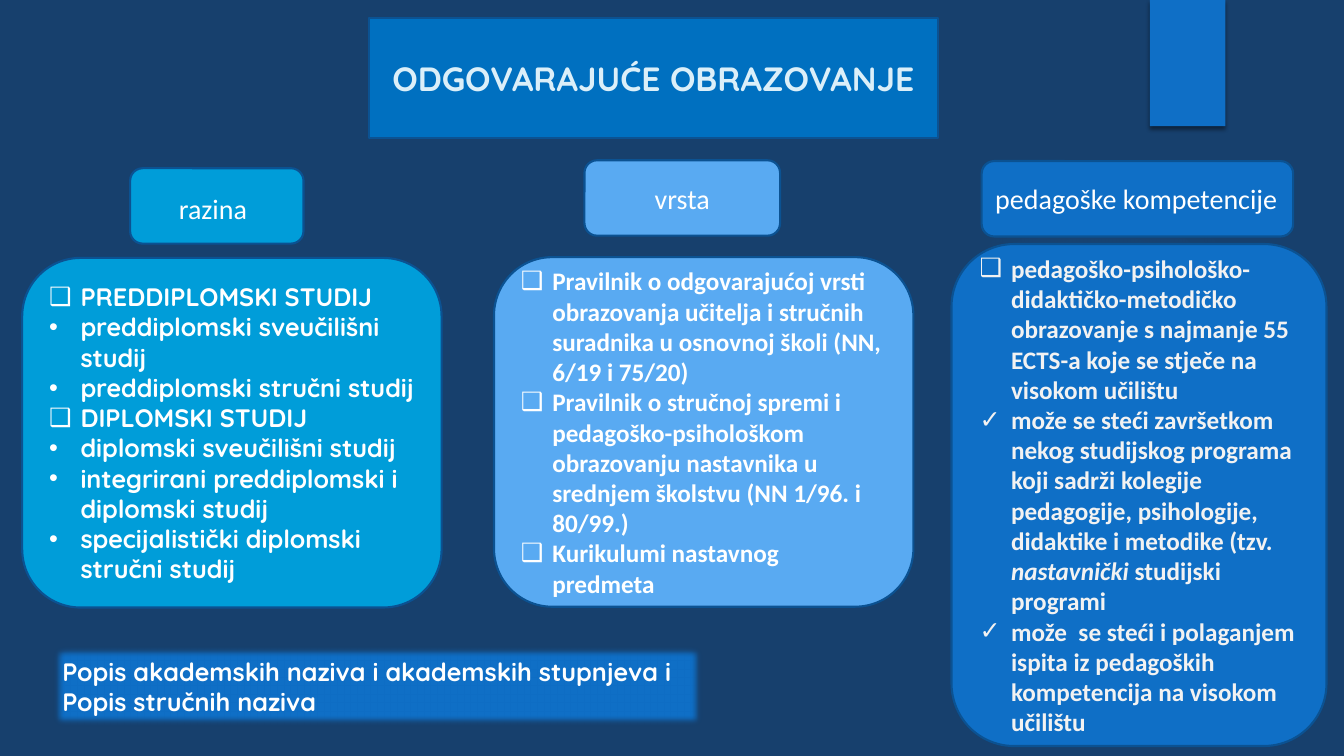
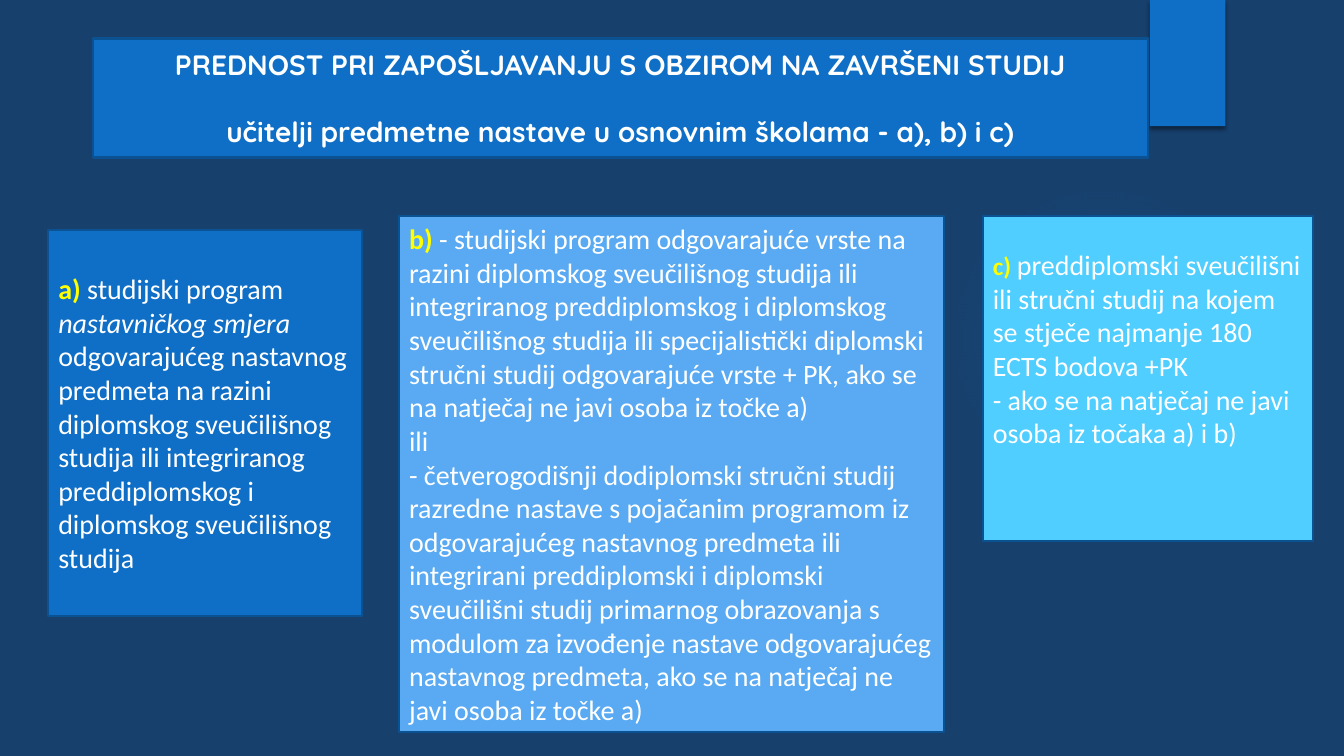
from lxml import etree
from pptx import Presentation
from pptx import util as u
from pptx.dml.color import RGBColor
from pptx.enum import shapes, text
from pptx.oxml import ns, parse_xml

NAVY, EDGE, BLUE, SKY = "17406D", "0B5292", "0F6FC6", "59AAF2"
CYAN, AQUA, TITLE = "009DD9", "4FCEFF", "0070C0"
WHITE, PALE, MIST, YELLOW = "FFFFFF", "F2F2F2", "DBEFF9", "FFFF00"
GLOW = "448AD7"
HEAD, BODY = "Quicksand", "Calibri"
RECT, ROUND = shapes.MSO_SHAPE.RECTANGLE, shapes.MSO_SHAPE.ROUNDED_RECTANGLE
LEFT, MID = text.PP_ALIGN.LEFT, text.PP_ALIGN.CENTER
INDENT = u.Cm(0.79)

MARK = {"color": YELLOW, "bold": True}
ITALIC = {"italic": True}


def rgb(code):
    return RGBColor.from_string(code)


def effect(shape, xml):
    """Append one DrawingML effect to the shape's effect list."""
    effects = shape._element.spPr.find(ns.qn("a:effectLst"))
    effects.append(parse_xml(xml.replace(" ", f" {ns.nsdecls('a')} ", 1)))


def block(slide, place, fill, kind=RECT, line=EDGE):
    """Draw a filled shape at (left, top, width, height) in cm."""
    shape = slide.shapes.add_shape(kind, *map(u.Cm, place))
    shape.shadow.inherit = False
    shape.fill.solid()
    shape.fill.fore_color.rgb = rgb(fill)
    if line:
        shape.line.color.rgb = rgb(line)
        shape.line.width = u.Pt(1.5)
    else:
        shape.line.fill.background()
    return shape


def glow(slide):
    """Draw the faint radial light behind the content."""
    shape = block(slide, (23.9, 4.65, 7.82, 7.82), GLOW,
                  shapes.MSO_SHAPE.OVAL, None)
    stops = "".join(
        f'<a:gs pos="{pos}000"><a:srgbClr val="{GLOW}">'
        f'<a:alpha val="{alpha}000"/></a:srgbClr></a:gs>'
        for pos, alpha in ((0, 7), (36, 6), (69, 0)))
    old = shape._element.spPr.find(ns.qn("a:solidFill"))
    old.getparent().replace(old, parse_xml(
        f'<a:gradFill {ns.nsdecls("a")}><a:gsLst>{stops}</a:gsLst>'
        '<a:path path="circle"><a:fillToRect l="50000" t="50000" '
        'r="50000" b="50000"/></a:path></a:gradFill>'))


def tab(slide):
    """Draw the blue tab hanging from the top edge."""
    shape = block(slide, (28.98, 0, 1.9, 3.18), BLUE, line=None)
    effect(shape, '<a:outerShdw blurRad="38100" dist="25400" dir="5400000" '
                  'rotWithShape="0"><a:srgbClr val="000000">'
                  '<a:alpha val="45000"/></a:srgbClr></a:outerShdw>')


def page(deck):
    slide = deck.slides.add_slide(deck.slide_layouts[6])
    glow(slide)
    tab(slide)
    return slide


def bullet(para, sign):
    props = para._p.get_or_add_pPr()
    props.set("marL", str(INDENT))
    props.set("indent", str(-INDENT))
    etree.SubElement(props, ns.qn("a:buFont")).set("typeface", "Arial")
    etree.SubElement(props, ns.qn("a:buChar")).set("char", sign)


def write(shape, paras, size=20, font=BODY, color=WHITE, bold=False,
          align=LEFT, signs="", gap=0):
    """Fill a shape; a paragraph is a string or a list of (text, style)."""
    frame = shape.text_frame
    frame.word_wrap = True
    frame.vertical_anchor = text.MSO_ANCHOR.MIDDLE
    for i, parts in enumerate(paras):
        para = frame.add_paragraph() if i else frame.paragraphs[0]
        para.alignment = align
        if i and gap:
            para.space_before = u.Pt(gap)
        if signs:
            bullet(para, signs[i])
        if isinstance(parts, str):
            parts = [(parts, {})]
        for words, style in parts:
            run = para.add_run()
            run.text = words
            run.font.name = font
            run.font.size = u.Pt(style.get("size", size))
            run.font.bold = style.get("bold", bold)
            run.font.italic = style.get("italic", False)
            run.font.color.rgb = rgb(style.get("color", color))


def level(deck):
    """Slide on level, kind and teaching skills."""
    slide = page(deck)
    write(block(slide, (9.3, 0.46, 14.33, 3.02), TITLE),
          ["ODGOVARAJUĆE OBRAZOVANJE"], 24, HEAD, MIST, True, MID)

    labels = [
        ((3.28, 4.24, 4.37, 1.9), CYAN, MID,
         [("razina", {}), (" ", {"size": 24})]),
        ((14.73, 4.04, 4.93, 1.9), SKY, MID, "vrsta"),
        ((24.74, 4.06, 7.85, 1.9), BLUE, LEFT, "pedagoške kompetencije"),
    ]
    for place, fill, align, label in labels:
        write(block(slide, place, fill, ROUND), [label], align=align)

    panels = [
        ((0.56, 6.5, 10.57, 8.81), CYAN, HEAD, WHITE, "❑••❑•••", [
            "PREDDIPLOMSKI STUDIJ",
            "preddiplomski sveučilišni studij",
            "preddiplomski stručni studij",
            "DIPLOMSKI STUDIJ",
            "diplomski sveučilišni studij",
            "integrirani preddiplomski i diplomski studij",
            "specijalistički diplomski stručni studij"]),
        ((12.45, 6.48, 10.57, 8.81), SKY, BODY, WHITE, "❑❑❑", [
            "Pravilnik o odgovarajućoj vrsti obrazovanja učitelja i stručnih "
            "suradnika u osnovnoj školi (NN, 6/19 i 75/20)",
            "Pravilnik o stručnoj spremi i pedagoško-psihološkom obrazovanju "
            "nastavnika u srednjem školstvu (NN 1/96. i 80/99.)",
            "Kurikulumi nastavnog predmeta"]),
        ((23.98, 6.15, 9.45, 12.65), BLUE, BODY, PALE, "❑✓✓", [
            "pedagoško-psihološko-didaktičko-metodičko obrazovanje s najmanje "
            "55 ECTS-a koje se stječe na visokom učilištu",
            [("može se steći završetkom nekog studijskog programa koji sadrži "
              "kolegije pedagogije, psihologije, didaktike i metodike (tzv. ",
              {}),
             ("nastavnički", ITALIC), (" studijski programi", {})],
            "može  se steći i polaganjem ispita iz pedagoških kompetencija na "
            "visokom učilištu"]),
    ]
    for place, fill, font, color, signs, paras in panels:
        write(block(slide, place, fill, ROUND), paras, 18, font, color, True,
              signs=signs)

    note = block(slide, (1.32, 16.28, 16.38, 2.03), BLUE)
    effect(note, '<a:softEdge rad="63500"/>')
    write(note, ["Popis akademskih naziva i akademskih stupnjeva i",
                 "Popis stručnih naziva"],
          18, HEAD, bold=True, align=text.PP_ALIGN.JUSTIFY)


def rank(deck):
    """Slide on the order of preference in hiring."""
    slide = page(deck)
    write(block(slide, (2.34, 0.97, 26.59, 3), BLUE),
          ["PREDNOST PRI ZAPOŠLJAVANJU S OBZIROM NA ZAVRŠENI STUDIJ",
           "učitelji predmetne nastave u osnovnim školama - a), b) i c)"],
          20, HEAD, bold=True, align=MID, gap=24)

    write(block(slide, (1.22, 5.79, 7.9, 9.73), BLUE), [
        [("a)", MARK), (" studijski program ", {}),
         ("nastavničkog smjera", ITALIC),
         (" odgovarajućeg nastavnog predmeta na razini diplomskog "
          "sveučilišnog studija ili integriranog preddiplomskog i "
          "diplomskog sveučilišnog studija", {})]])

    write(block(slide, (10.06, 5.44, 13.74, 13), SKY), [
        [("b) ", MARK),
         ("- studijski program odgovarajuće vrste na razini diplomskog "
          "sveučilišnog studija ili integriranog preddiplomskog i diplomskog "
          "sveučilišnog studija ili specijalistički diplomski stručni studij "
          "odgovarajuće vrste + PK, ako se na natječaj ne javi osoba iz "
          "točke a)", {})],
        "ili",
        "- četverogodišnji dodiplomski stručni studij razredne nastave s "
        "pojačanim programom iz odgovarajućeg nastavnog predmeta ili "
        "integrirani preddiplomski i diplomski sveučilišni studij primarnog "
        "obrazovanja s modulom za izvođenje nastave odgovarajućeg nastavnog "
        "predmeta, ako se na natječaj ne javi osoba iz točke a)"])

    third = block(slide, (24.77, 5.44, 8.33, 8.2), AQUA)
    write(third, [
        [("c) ", {**MARK, "size": 18}),
         ("preddiplomski sveučilišni ili stručni studij na kojem se stječe "
          "najmanje 180 ECTS bodova +PK", {})],
        "- ako se na natječaj ne javi osoba iz točaka a) i b)"])
    third.text_frame.vertical_anchor = text.MSO_ANCHOR.TOP
    third.text_frame.margin_top = u.Cm(0.8)


def main():
    deck = Presentation()
    deck.slide_width, deck.slide_height = u.Cm(33.87), u.Cm(19.05)
    back = deck.slide_master.background.fill
    back.solid()
    back.fore_color.rgb = rgb(NAVY)
    level(deck)
    rank(deck)
    deck.save("out.pptx")


if __name__ == "__main__":
    main()
